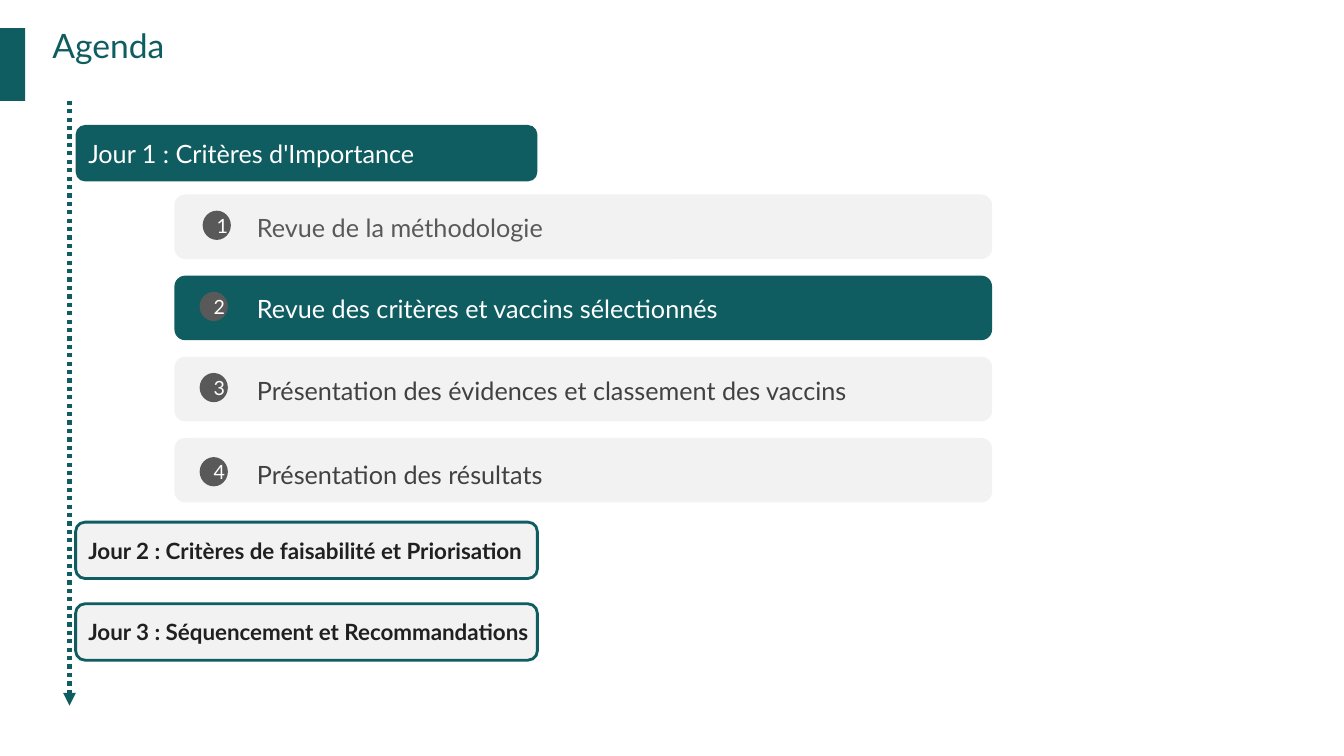
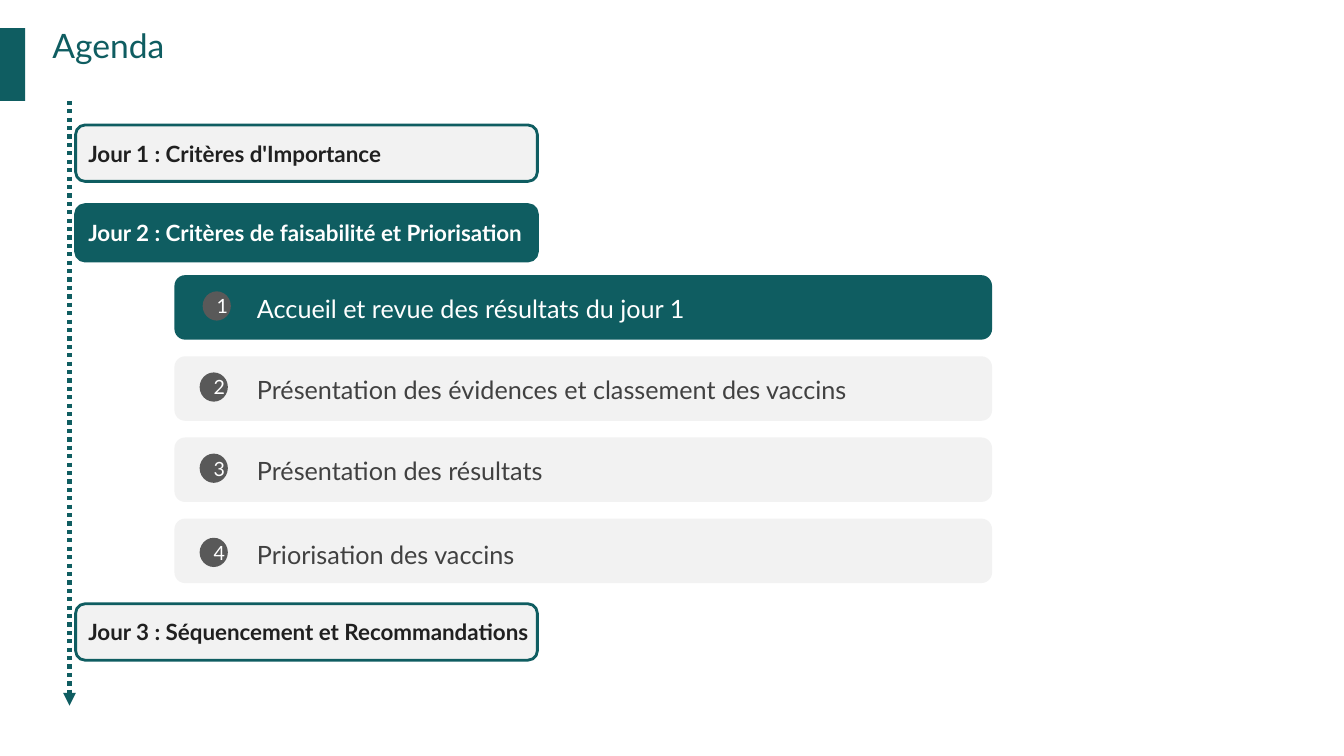
"""Build two agenda slides of a three-day workshop."""
import dataclasses
import typing

import lxml.etree
import pptx
import pptx.dml.color
import pptx.enum.dml
import pptx.enum.shapes
import pptx.enum.text
import pptx.oxml.ns
import pptx.slide
import pptx.util

Inches = pptx.util.Inches
Points = pptx.util.Pt
RGBColor = pptx.dml.color.RGBColor
ShapeKind = pptx.enum.shapes.MSO_SHAPE
Alignment = pptx.enum.text.PP_ALIGN
Anchor = pptx.enum.text.MSO_ANCHOR

TEAL = RGBColor(0x0F, 0x5D, 0x61)
LIGHT_GREY = RGBColor(0xF2, 0xF2, 0xF2)
MID_GREY = RGBColor(0x59, 0x59, 0x59)
DARK_GREY = RGBColor(0x41, 0x41, 0x41)
INK = RGBColor(0x20, 0x20, 0x20)
WHITE = RGBColor(0xFF, 0xFF, 0xFF)

TITLE_FONT = {"name": "Lato", "size": Points(24), "bold": False}
TOPIC_FONT = {"name": "Lato", "size": Points(18), "bold": False}
DAY_FONT = {"name": "Lato", "size": Points(16), "bold": True}
BADGE_FONT = {"name": "Lato", "size": Points(14), "bold": False}

NO_MARGINS = dict.fromkeys(("margin_left", "margin_top", "margin_right", "margin_bottom"), 0)
DAY_FRAME = {"margin_right": 0, "vertical_anchor": Anchor.MIDDLE}
BADGE_FRAME = {"vertical_anchor": Anchor.MIDDLE}
TOPIC_FRAME = {"auto_size": pptx.enum.text.MSO_AUTO_SIZE.SHAPE_TO_FIT_TEXT}

TOPIC_PITCH = 0.805
DAY_1 = "Jour 1 : Critères d'Importance"
DAY_2 = "Jour 2 : Critères de faisabilité et Priorisation"
DAY_3 = "Jour 3 : Séquencement et Recommandations"
EVIDENCE = "Présentation des évidences et classement des vaccins"
RESULTS = "Présentation des résultats"


class Box(typing.NamedTuple):
    """Left, top, width and height in inches."""
    left: float
    top: float
    width: float
    height: float

    def lengths(self) -> list[pptx.util.Length]:
        """Return the four values as lengths."""
        return [Inches(value) for value in self]


@dataclasses.dataclass(frozen=True)
class Day:
    """A day label on the timeline."""
    text: str
    top: float
    active: bool = False
    outlined: bool = True
    font: dict = dataclasses.field(default_factory=lambda: DAY_FONT)


@dataclasses.dataclass(frozen=True)
class Topic:
    """A numbered topic below the current day."""
    text: str
    active: bool = False
    color: RGBColor = DARK_GREY


@dataclasses.dataclass(frozen=True)
class Agenda:
    """The content of one agenda slide."""
    days: tuple[Day, ...]
    topics: tuple[Topic, ...]
    topics_top: float


AGENDAS = (
    Agenda(
        (Day(DAY_1, 1.24, True, False, TOPIC_FONT), Day(DAY_2, 5.18), Day(DAY_3, 5.99)),
        (
            Topic("Revue de la méthodologie", color=MID_GREY),
            Topic("Revue des critères et vaccins sélectionnés", True),
            Topic(EVIDENCE),
            Topic(RESULTS),
        ),
        1.93,
    ),
    Agenda(
        (Day(DAY_1, 1.24), Day(DAY_2, 2.03, True), Day(DAY_3, 5.99)),
        (
            Topic("Accueil et revue des résultats du jour 1", True),
            Topic(EVIDENCE),
            Topic(RESULTS),
            Topic("Priorisation des vaccins"),
        ),
        2.73,
    ),
)


def apply_format(target: typing.Any, values: dict) -> None:
    """Set each named attribute on the target."""
    for name, value in values.items():
        setattr(target, name, value)


def write_text(shape: typing.Any, text: str, font: dict, color: RGBColor,
               frame: dict, alignment: Alignment = Alignment.LEFT) -> None:
    """Write one formatted paragraph into a shape."""
    shape.text_frame.word_wrap = True
    apply_format(shape.text_frame, frame)
    paragraph = shape.text_frame.paragraphs[0]
    paragraph.alignment = alignment
    run = paragraph.add_run()
    run.text = text
    apply_format(run.font, font)
    run.font.color.rgb = color


def add_block(slide: pptx.slide.Slide, kind: ShapeKind, box: Box, fill: RGBColor,
              outlined: bool = False) -> typing.Any:
    """Add a filled shape, with a teal outline on request."""
    shape = slide.shapes.add_shape(kind, *box.lengths())
    shape.shadow.inherit = False
    shape.fill.solid()
    shape.fill.fore_color.rgb = fill
    if outlined:
        shape.line.color.rgb = TEAL
        shape.line.width = Points(2)
    else:
        shape.line.fill.background()
    return shape


def add_header(slide: pptx.slide.Slide) -> None:
    """Add the edge band and the title."""
    add_block(slide, ShapeKind.RECTANGLE, Box(-0.01, 0.28, 0.26, 0.72), TEAL)
    title = slide.shapes.add_textbox(*Box(0.52, 0.25, 12.55, 0.8).lengths())
    write_text(title, "Agenda", TITLE_FONT, TEAL, NO_MARGINS)


def add_timeline(slide: pptx.slide.Slide) -> None:
    """Add the dotted arrow that runs down the days."""
    timeline = slide.shapes.add_connector(
        pptx.enum.shapes.MSO_CONNECTOR.STRAIGHT,
        Inches(0.69), Inches(1), Inches(0.69), Inches(7))
    timeline.line.color.rgb = TEAL
    apply_format(timeline.line, {
        "width": Points(3), "dash_style": pptx.enum.dml.MSO_LINE.ROUND_DOT})
    qualified = pptx.oxml.ns.qn
    lxml.etree.SubElement(timeline.get_or_add_ln(), qualified("a:tailEnd"), type="triangle")
    lxml.etree.SubElement(timeline.element.spPr, qualified("a:effectLst"))


def add_day(slide: pptx.slide.Slide, day: Day) -> None:
    """Add a day label."""
    shape = add_block(slide, ShapeKind.ROUNDED_RECTANGLE, Box(0.75, day.top, 4.58, 0.56),
                      TEAL if day.active else LIGHT_GREY, day.outlined)
    write_text(shape, day.text, day.font, WHITE if day.active else INK, DAY_FRAME)


def add_topic(slide: pptx.slide.Slide, topic: Topic, number: int, top: float,
              is_last: bool) -> None:
    """Add a topic bar with its number badge and text."""
    add_block(slide, ShapeKind.ROUNDED_RECTANGLE, Box(1.73, top, 8.11, 0.64),
              TEAL if topic.active else LIGHT_GREY)
    content_top = top + (0.03 if is_last else 0)
    badge_left = 2.01 if number == 1 else 1.98
    badge = add_block(slide, ShapeKind.OVAL,
                      Box(badge_left, content_top + 0.16, 0.28, 0.29), MID_GREY)
    write_text(badge, str(number), BADGE_FONT, WHITE, BADGE_FRAME, Alignment.CENTER)
    label = slide.shapes.add_textbox(
        *Box(2.45, content_top + 0.13, 7.19 if number == 1 else 6.93, 0.4).lengths())
    write_text(label, topic.text, TOPIC_FONT, WHITE if topic.active else topic.color,
               TOPIC_FRAME)


def add_agenda(presentation: typing.Any, agenda: Agenda) -> None:
    """Add one agenda slide."""
    slide = presentation.slides.add_slide(presentation.slide_layouts[6])
    add_header(slide)
    add_timeline(slide)
    for day in agenda.days:
        add_day(slide, day)
    for number, topic in enumerate(agenda.topics, start=1):
        top = agenda.topics_top + (number - 1) * TOPIC_PITCH
        add_topic(slide, topic, number, top, number == len(agenda.topics))


def main() -> None:
    """Build and save the presentation."""
    presentation = pptx.Presentation()
    presentation.slide_width = Inches(13.33)
    presentation.slide_height = Inches(7.5)
    for agenda in AGENDAS:
        add_agenda(presentation, agenda)
    presentation.save("out.pptx")


if __name__ == "__main__":
    main()
